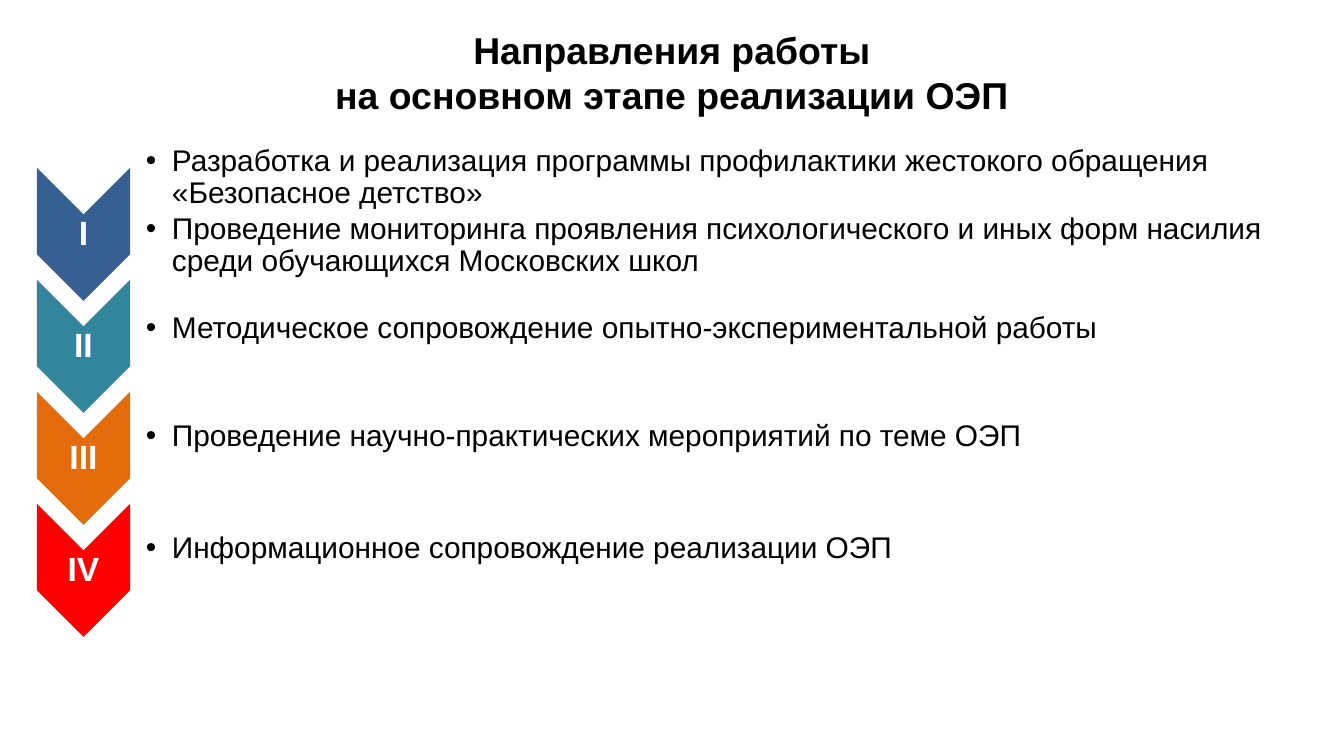
from dataclasses import dataclass

from lxml import etree
from pptx import Presentation
from pptx import util as u
from pptx.dml.color import RGBColor
from pptx.enum import shapes, text
from pptx.oxml.ns import qn

SCALE = 914400 / 134.4
FONT = "Arial"
HUES = {
    "ink": "000000",
    "white": "FFFFFF",
    "blue": "376092",
    "teal": "31859C",
    "orange": "E46C0A",
    "red": "FF0000",
}
PITCH = 112
INDENT = 26


@dataclass
class Box:
    left: int
    top: int
    width: int
    height: int


@dataclass
class Step:
    mark: str
    hue: str
    area: Box
    items: list[str]


STEPS = [
    Step("I", "blue", Box(130, 144, 1207, 136), [
        "Разработка и реализация программы профилактики жестокого обращения «Безопасное детство»",
        "Проведение мониторинга проявления психологического и иных форм насилия среди обучающихся Московских школ",
    ]),
    Step("II", "teal", Box(130, 290, 1210, 78),
         ["Методическое сопровождение опытно-экспериментальной работы"]),
    Step("III", "orange", Box(130, 398, 1210, 78),
         ["Проведение научно-практических мероприятий по теме ОЭП"]),
    Step("IV", "red", Box(130, 510, 1210, 78),
         ["Информационное сопровождение реализации ОЭП"]),
]


def px(size: int) -> int:
    return round(size * SCALE)


def place(box: Box) -> tuple[int, int, int, int]:
    return px(box.left), px(box.top), px(box.width), px(box.height)


def style(para, size: int, hue: str, bold: bool = False) -> None:
    para.font.name = FONT
    para.font.size = u.Pt(size)
    para.font.bold = bold
    para.font.color.rgb = RGBColor.from_string(HUES[hue])


def frame(slide, box: Box, left: int = 1, side: int = 1):
    body = slide.shapes.add_textbox(*place(box)).text_frame
    body.word_wrap = True
    body.vertical_anchor = text.MSO_ANCHOR.MIDDLE
    body.margin_left = px(left)
    body.margin_right = body.margin_top = body.margin_bottom = px(side)
    return body


def label(slide, box: Box, words: str, size: int, hue: str, lead: float) -> None:
    para = frame(slide, box).paragraphs[0]
    para.text = words
    para.alignment = text.PP_ALIGN.CENTER
    para.line_spacing = lead
    style(para, size, hue, True)


def bullet(para) -> None:
    props = para._p.get_or_add_pPr()
    props.set("marL", str(px(INDENT)))
    props.set("indent", str(-px(INDENT)))
    etree.SubElement(props, qn("a:buFont")).set("typeface", FONT)
    etree.SubElement(props, qn("a:buChar")).set("char", "•")


def notes(slide, box: Box, items: list[str]) -> None:
    body = frame(slide, box, left=16)
    for i, item in enumerate(items):
        para = body.paragraphs[0] if i == 0 else body.add_paragraph()
        para.text = item
        bullet(para)
        para.line_spacing = 0.9
        para.space_after = u.Pt(2)
        style(para, 16, "ink")


def arrow(slide, box: Box, hue: str) -> None:
    shape = slide.shapes.add_shape(shapes.MSO_SHAPE.CHEVRON, *place(box))
    shape.rotation = 90
    shape.shadow.inherit = False
    shape.fill.solid()
    shape.fill.fore_color.rgb = RGBColor.from_string(HUES[hue])
    shape.line.fill.background()


def main() -> None:
    deck = Presentation()
    deck.slide_width, deck.slide_height = px(1344), px(756)
    slide = deck.slides.add_slide(deck.slide_layouts[6])
    label(slide, Box(67, 9, 1210, 126),
          "Направления работы\vна основном этапе реализации ОЭП", 20, "ink", 1.0)
    for i, step in enumerate(STEPS):
        drop = i * PITCH
        arrow(slide, Box(17, 188 + drop, 133, 93), step.hue)
        label(slide, Box(37, 215 + drop, 93, 40), step.mark, 18, "white", 0.9)
        notes(slide, step.area, step.items)
    deck.save("out.pptx")


if __name__ == "__main__":
    main()
